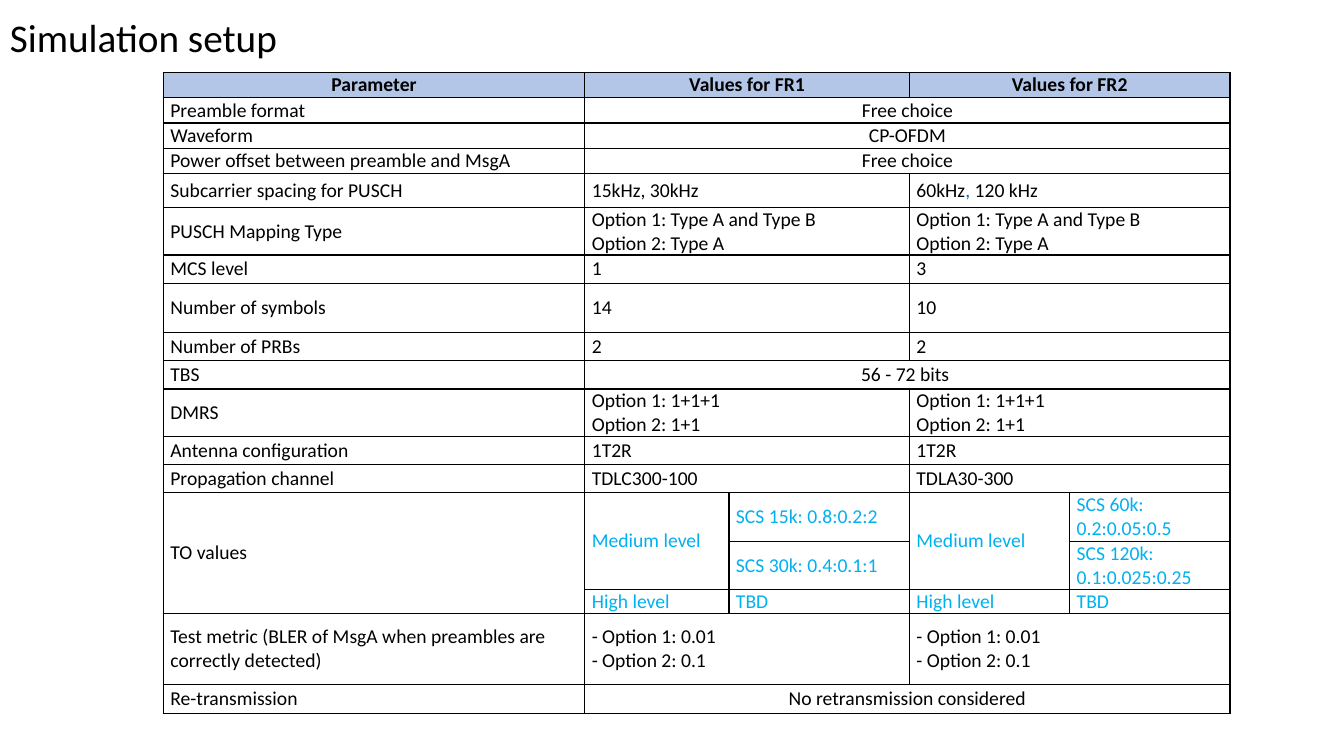
import pptx
import pptx.dml.color
import pptx.enum.text
import pptx.oxml
import pptx.oxml.ns
import pptx.util

PX = 9144
FONT = "Calibri"
COLORS = {
    "ink": "000000",
    "head": "B4C6E7",
    "body": "FFFFFF",
    "new": "00B0F0",
    "mark": "0070C0",
}
COLS = [418, 143, 179, 159, 159]
TYPES = "Option 1: Type A and Type B\nOption 2: Type A"
PILOTS = "Option 1: 1+1+1\nOption 2: 1+1"
RATES = "- Option 1: 0.01\n- Option 2: 0.1"
BANDS = [("60kHz", "ink"), (",", "mark"), (" 120 kHz", "ink")]
ROWS = [
    (25, "Parameter", ["Values for FR1", "Values for FR2"]),
    (25, "Preamble format", ["Free choice"]),
    (25, "Waveform", ["CP-OFDM"]),
    (25, "Power offset between preamble and MsgA", ["Free choice"]),
    (34, "Subcarrier spacing for PUSCH", ["15kHz, 30kHz", BANDS]),
    (47, "PUSCH Mapping Type", [TYPES, TYPES]),
    (28, "MCS level", ["1", "3"]),
    (49, "Number of symbols", ["14", "10"]),
    (28, "Number of PRBs", ["2", "2"]),
    (28, "TBS", ["56 - 72 bits "]),
    (47, "DMRS", [PILOTS, PILOTS]),
    (28, "Antenna configuration", ["1T2R", "1T2R"]),
    (28, "Propagation channel", ["TDLC300-100", "TDLA30-300"]),
    (48, "TO values", ["Medium level", "SCS 15k: 0.8:0.2:2",
                       "Medium level", "SCS 60k: 0.2:0.05:0.5"]),
    (48, None, [None, "SCS 30k: 0.4:0.1:1",
                None, "SCS 120k: 0.1:0.025:0.25"]),
    (24, None, ["High level", "TBD", "High level", "TBD"]),
    (70, "Test metric (BLER of MsgA when preambles are correctly detected)",
     [RATES, RATES]),
    (29, "Re-transmission", ["No retransmission considered"]),
]
LEVELS = 13


def px(n):
    return pptx.util.Emu(n * PX)


def rgb(name):
    return pptx.dml.color.RGBColor.from_string(COLORS[name])


def write(frame, text, size=14, color="ink", bold=False, center=False, space=None):
    lines = text.split("\n") if isinstance(text, str) else [text]
    for i, line in enumerate(lines):
        para = frame.add_paragraph() if i else frame.paragraphs[0]
        align = pptx.enum.text.PP_ALIGN
        para.alignment = align.CENTER if center else align.LEFT
        if space:
            para.line_spacing = space
        for part, hue in [(line, color)] if isinstance(line, str) else line:
            run = para.add_run()
            run.text = part
            run.font.name = FONT
            run.font.size = pptx.util.Pt(size)
            run.font.bold = bold
            run.font.color.rgb = rgb(hue)


def add_title(slide, text):
    frame = slide.shapes.add_textbox(0, 0, px(1150), px(78)).text_frame
    frame.word_wrap = True
    frame.vertical_anchor = pptx.enum.text.MSO_ANCHOR.MIDDLE
    write(frame, text, size=28, space=0.9)


def add_edges(cell):
    props = cell._tc.get_or_add_tcPr()
    space = pptx.oxml.ns.nsdecls("a")
    for i, side in enumerate("LRTB"):
        props.insert(i, pptx.oxml.parse_xml(
            f'<a:ln{side} {space} w="12700"><a:solidFill>'
            f'<a:srgbClr val="{COLORS["ink"]}"/></a:solidFill></a:ln{side}>'))


def style(cell, fill):
    add_edges(cell)
    cell.fill.solid()
    cell.fill.fore_color.rgb = rgb(fill)
    cell.margin_left = cell.margin_right = px(7)
    cell.margin_top = cell.margin_bottom = 0
    cell.vertical_anchor = pptx.enum.text.MSO_ANCHOR.MIDDLE


def fill_row(table, r, label, values):
    head = r == 0
    for c in range(len(COLS)):
        style(table.cell(r, c), "head" if head else "body")
    if label:
        write(table.cell(r, 0).text_frame, label, bold=head, center=head)
    span = 4 // len(values)
    for i, value in enumerate(values):
        c = 1 + i * span
        cell = table.cell(r, c)
        if span > 1:
            cell.merge(table.cell(r, c + span - 1))
        if value:
            write(cell.text_frame, value, bold=head, center=head or span == 4,
                  color="new" if span == 1 else "ink")


def add_grid(slide):
    high = sum(row[0] for row in ROWS)
    table = slide.shapes.add_table(
        len(ROWS), len(COLS), px(162), px(72), px(sum(COLS)), px(high)).table
    table.first_row = table.horz_banding = False
    for col, wide in zip(table.columns, COLS):
        col.width = px(wide)
    for r, (tall, label, values) in enumerate(ROWS):
        table.rows[r].height = px(tall)
        fill_row(table, r, label, values)
    table.cell(LEVELS, 0).merge(table.cell(LEVELS + 2, 0))
    for c in (1, 3):
        table.cell(LEVELS, c).merge(table.cell(LEVELS + 1, c))


def main():
    deck = pptx.Presentation()
    deck.slide_width, deck.slide_height = px(1333), px(750)
    slide = deck.slides.add_slide(deck.slide_layouts[6])
    add_title(slide, "Simulation setup")
    add_grid(slide)
    deck.save("out.pptx")


if __name__ == "__main__":
    main()
